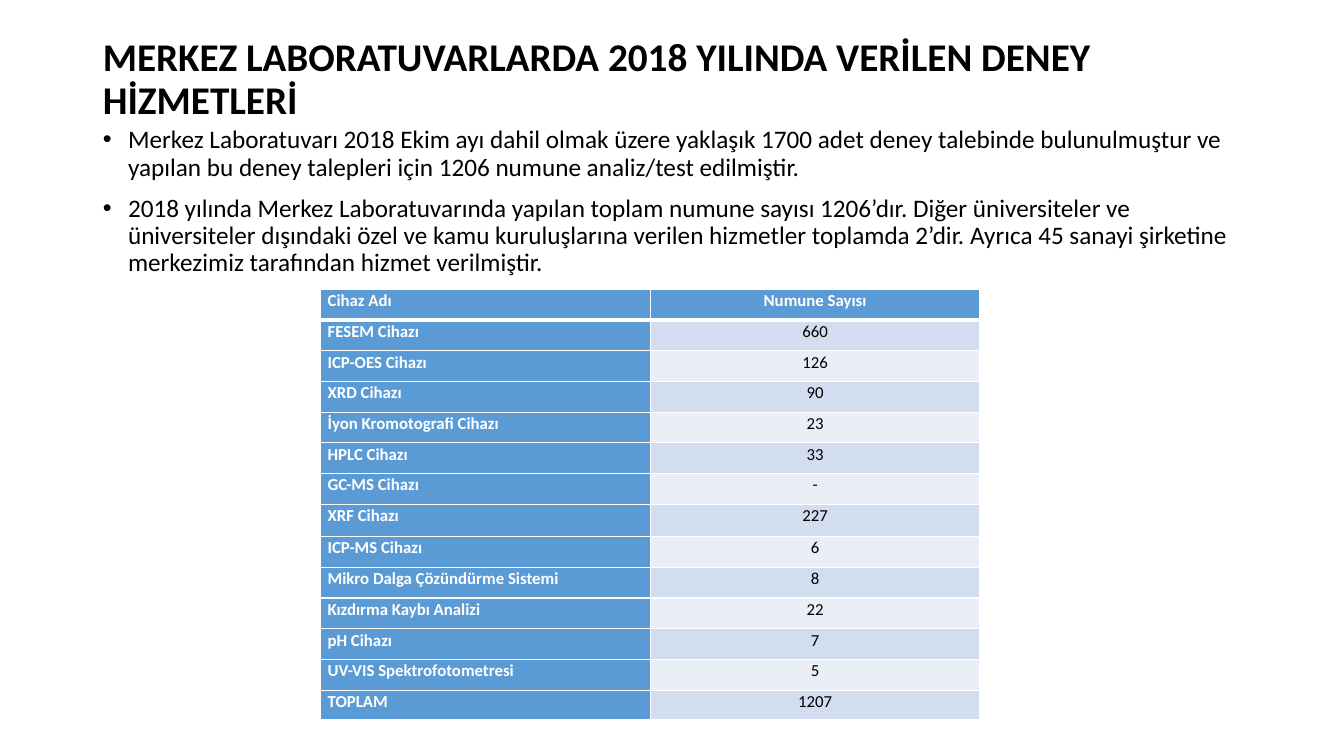
from dataclasses import dataclass

from lxml.etree import SubElement
from pptx import Presentation
from pptx.dml.color import RGBColor
from pptx.enum.text import MSO_ANCHOR, MSO_AUTO_SIZE, PP_ALIGN
from pptx.oxml.ns import qn
from pptx.util import Inches, Pt


@dataclass(frozen=True)
class Theme:
    font: str = "Calibri"
    black: str = "000000"
    white: str = "FFFFFF"
    blue: str = "5B9BD5"
    bands: tuple = ("D2DEEF", "EAEFF7")
    title_size: int = 28
    body_size: int = 18
    table_size: int = 12


THEME = Theme()


def format_paragraph(para, size, color, bold, align, line_spacing, space_before=0):
    para.alignment = align
    para.line_spacing = line_spacing
    para.space_before = Pt(space_before)
    for span in para.runs:
        span.font.name = THEME.font
        span.font.size = Pt(size)
        span.font.bold = bold
        span.font.color.rgb = RGBColor.from_string(color)


def add_border(cell, side, width):
    line = SubElement(cell._tc.get_or_add_tcPr(), qn(f"a:{side}"), w=str(Pt(width)))
    SubElement(SubElement(line, qn("a:solidFill")), qn("a:srgbClr"), val=THEME.white)


# Deck and page
deck = Presentation()
deck.slide_width, deck.slide_height = Inches(13.33), Inches(7.5)
page = deck.slides.add_slide(deck.slide_layouts[1])
title, body = page.placeholders

# Title
title.left, title.top = Inches(0.92), Inches(0.4)
title.width, title.height = Inches(11.5), Inches(0.79)
title.text_frame.text = "MERKEZ LABORATUVARLARDA 2018 YILINDA VERİLEN DENEY HİZMETLERİ"
title.text_frame.vertical_anchor = MSO_ANCHOR.MIDDLE
title.text_frame.auto_size = MSO_AUTO_SIZE.NONE
format_paragraph(title.text_frame.paragraphs[0], THEME.title_size, THEME.black,
                 True, PP_ALIGN.LEFT, 0.9)

# Bulleted summary
body.left, body.top = Inches(0.92), Inches(1.21)
body.width, body.height = Inches(11.5), Inches(5.54)
body.text_frame.text = "\n".join([
    "Merkez Laboratuvarı 2018 Ekim ayı dahil olmak üzere yaklaşık 1700 adet deney "
    "talebinde bulunulmuştur ve yapılan bu deney talepleri için 1206 numune "
    "analiz/test edilmiştir.",
    "2018 yılında Merkez Laboratuvarında yapılan toplam numune sayısı 1206’dır. "
    "Diğer üniversiteler ve üniversiteler dışındaki özel ve kamu kuruluşlarına "
    "verilen hizmetler toplamda 2’dir. Ayrıca 45 sanayi şirketine merkezimiz "
    "tarafından hizmet verilmiştir.",
])
body.text_frame.auto_size = MSO_AUTO_SIZE.NONE
for para in body.text_frame.paragraphs:
    format_paragraph(para, THEME.body_size, THEME.black, False, PP_ALIGN.LEFT, 0.9, 10)
    properties = para._p.get_or_add_pPr()
    properties.set("marL", str(Inches(0.25)))
    properties.set("indent", str(Inches(-0.25)))
    SubElement(properties, qn("a:buFont"), typeface="Arial")
    SubElement(properties, qn("a:buChar"), char="•")

# Sample counts by device
samples = [
    ("Cihaz Adı", "Numune Sayısı"),
    ("FESEM Cihazı", "660"),
    ("ICP-OES Cihazı", "126"),
    ("XRD Cihazı", "90"),
    ("İyon Kromotografi Cihazı", "23"),
    ("HPLC Cihazı", "33"),
    ("GC-MS Cihazı", "-"),
    ("XRF Cihazı", "227"),
    ("ICP-MS Cihazı", "6"),
    ("Mikro Dalga Çözündürme Sistemi", "8"),
    ("Kızdırma Kaybı Analizi", "22"),
    ("pH Cihazı", "7"),
    ("UV-VIS Spektrofotometresi", "5"),
    ("TOPLAM", "1207"),
]
table_height = 4.27
special_heights = {7: 0.32, len(samples) - 1: 0.29}
row_height = ((table_height - sum(special_heights.values()))
              / (len(samples) - len(special_heights)))
table = page.shapes.add_table(len(samples), 2, Inches(3.18), Inches(2.87),
                              Inches(6.54), Inches(table_height)).table
table.first_col = True

for row_index, sample in enumerate(samples):
    table.rows[row_index].height = Inches(special_heights.get(row_index, row_height))
    for column_index, text in enumerate(sample):
        cell = table.cell(row_index, column_index)
        is_heading = row_index == 0 or column_index == 0
        cell.text_frame.text = text
        cell.margin_left = cell.margin_right = Inches(0.07)
        cell.margin_top = cell.margin_bottom = 0
        format_paragraph(cell.text_frame.paragraphs[0], THEME.table_size,
                         THEME.white if is_heading else THEME.black, is_heading,
                         PP_ALIGN.CENTER if column_index else PP_ALIGN.LEFT, 1.07)
        for side in ("lnL", "lnR", "lnT", "lnB"):
            under_header = (row_index, side) in ((0, "lnB"), (1, "lnT"))
            add_border(cell, side, 3 if under_header else 1)
        cell.fill.solid()
        fill_color = THEME.blue if is_heading else THEME.bands[(row_index - 1) % 2]
        cell.fill.fore_color.rgb = RGBColor.from_string(fill_color)

deck.save("out.pptx")
